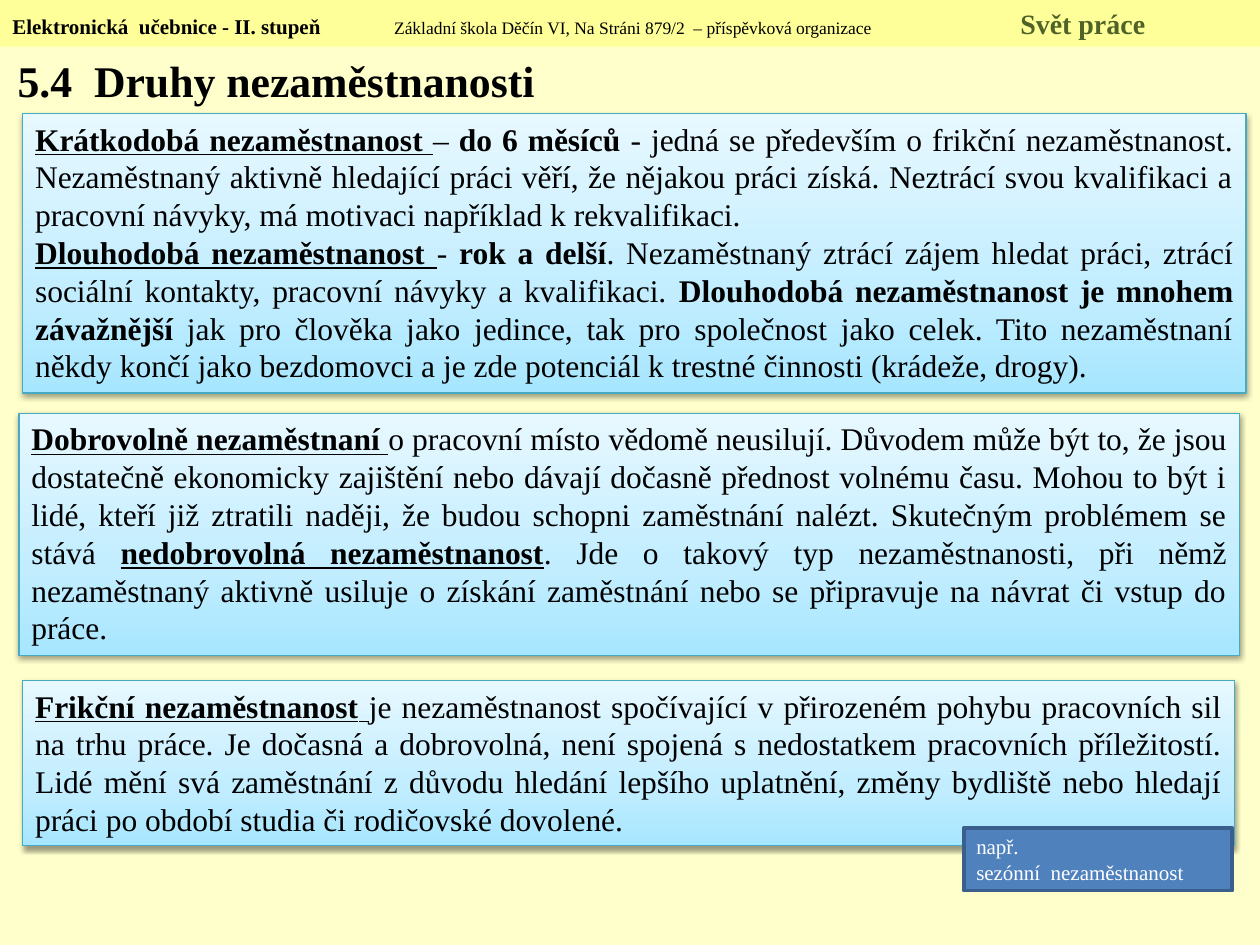
from lxml import etree
from pptx import Presentation
from pptx.dml.color import RGBColor
from pptx.enum import shapes, text
from pptx.oxml import parse_xml
from pptx.oxml.ns import nsdecls, qn
from pptx.util import Inches, Pt

FONT = "Times New Roman"
GRADIENT = [(0, "A7E6FF"), (35, "C1EDFF"), (100, "E7F8FF")]

VOLUNTARY = [
    [("Dobrovolně nezaměstnaní ", "bu"),
     ("o pracovní místo vědomě neusilují. Důvodem může být to, že jsou dostatečně "
      "ekonomicky zajištění nebo dávají dočasně přednost volnému času. Mohou to být i "
      "lidé, kteří již ztratili naději, že budou schopni zaměstnání nalézt. Skutečným "
      "problémem se stává ", ""),
     ("nedobrovolná nezaměstnanost", "bu"),
     (". Jde o takový typ nezaměstnanosti, při němž nezaměstnaný aktivně usiluje o "
      "získání zaměstnání nebo se připravuje na návrat či vstup do práce.", "")],
]
DURATION = [
    [("Krátkodobá nezaměstnanost ", "bu"), ("– ", ""), ("do 6 měsíců", "b"),
     (" - jedná se především o frikční nezaměstnanost. Nezaměstnaný aktivně hledající "
      "práci věří, že nějakou práci získá. Neztrácí svou kvalifikaci a pracovní návyky, "
      "má motivaci například k rekvalifikaci.", "")],
    [("Dlouhodobá nezaměstnanost ", "bu"), ("- ", ""), ("rok a delší", "b"),
     (". Nezaměstnaný ztrácí zájem hledat práci, ztrácí sociální kontakty, pracovní "
      "návyky a kvalifikaci. ", ""),
     ("Dlouhodobá nezaměstnanost je mnohem závažnější", "b"),
     (" jak pro člověka jako jedince, tak pro společnost jako celek. Tito nezaměstnaní "
      "někdy končí jako bezdomovci a je zde potenciál k trestné činnosti (krádeže, "
      "drogy).", "")],
]
FRICTIONAL = [
    [("Frikční nezaměstnanost", "bu"), (" ", "u"),
     ("je nezaměstnanost spočívající v přirozeném pohybu pracovních sil na trhu práce. "
      "Je dočasná a dobrovolná, není spojená s nedostatkem pracovních příležitostí. Lidé "
      "mění svá zaměstnání z důvodu hledání lepšího uplatnění, změny bydliště nebo "
      "hledají práci po období studia či rodičovské dovolené.", "")],
]


def rgb(value):
    """Return the colour for a hex string."""
    return RGBColor.from_string(value)


def add_run(p, words, size, style="", color="000000"):
    """Append a run; style may hold b for bold and u for underline."""
    r = p.add_run()
    r.text = words
    r.font.name = FONT
    r.font.size = Pt(size)
    r.font.bold = "b" in style
    r.font.underline = "u" in style
    r.font.color.rgb = rgb(color)


def add_box(s, left, top, width, height, fill=None, line=None, line_width=0.75):
    """Add a rectangle with top-anchored text."""
    sp = s.shapes.add_shape(shapes.MSO_SHAPE.RECTANGLE, Inches(left), Inches(top),
                            Inches(width), Inches(height))
    sp.shadow.inherit = False
    if fill:
        sp.fill.solid()
        sp.fill.fore_color.rgb = rgb(fill)
    if line:
        sp.line.color.rgb = rgb(line)
        sp.line.width = Pt(line_width)
    else:
        sp.line.fill.background()
    sp.text_frame.word_wrap = True
    sp.text_frame.vertical_anchor = text.MSO_ANCHOR.TOP
    return sp


def add_paragraphs(sp, paragraphs, size, align, color="000000"):
    """Fill a shape with paragraphs given as lists of (words, style)."""
    tf = sp.text_frame
    for i, runs in enumerate(paragraphs):
        p = tf.add_paragraph() if i else tf.paragraphs[0]
        p.alignment = align
        for words, style in runs:
            add_run(p, words, size, style, color)


def add_panel(s, left, top, width, height, paragraphs):
    """Add a shaded, shadowed panel of justified text."""
    sp = add_box(s, left, top, width, height, line="46AAC5")
    sp.fill.gradient()
    sp.fill.gradient_angle = 90
    props = sp._element.spPr
    stops = props.find(".//" + qn("a:gsLst"))
    for stop in list(stops):
        stops.remove(stop)
    for position, color in GRADIENT:
        stop = etree.SubElement(stops, qn("a:gs"), pos=str(position * 1000))
        etree.SubElement(stop, qn("a:srgbClr"), val=color)
    props.find(qn("a:effectLst")).append(parse_xml(
        f'<a:outerShdw {nsdecls("a")} blurRad="{Pt(3.1)}" dist="{Pt(1.6)}" '
        'dir="5400000" rotWithShape="0"><a:srgbClr val="000000">'
        '<a:alpha val="38000"/></a:srgbClr></a:outerShdw>'))
    add_paragraphs(sp, paragraphs, 18, text.PP_ALIGN.JUSTIFY)


def add_header(s):
    """Add the top band with its three tabbed labels."""
    p = add_box(s, 0, 0, 10, 0.37, "FFFF99").text_frame.paragraphs[0]
    p.alignment = text.PP_ALIGN.LEFT
    tabs = etree.SubElement(p._p.get_or_add_pPr(), qn("a:tabLst"))
    for position in (3.03, 8):
        etree.SubElement(tabs, qn("a:tab"), pos=str(Inches(position)), algn="l")
    add_run(p, "Elektronická  učebnice - II. stupeň\t", 12, "b")
    add_run(p, "Základní škola Děčín VI, Na Stráni 879/2  – příspěvková organizace\t", 10)
    add_run(p, "Svět práce", 16, "b", "4F6228")


def set_title(s, words):
    """Place and format the title."""
    sp = s.shapes.title
    sp.left, sp.top, sp.width, sp.height = map(Inches, (0.04, 0.37, 10, 0.53))
    tf = sp.text_frame
    tf.auto_size = text.MSO_AUTO_SIZE.NONE
    tf.vertical_anchor = text.MSO_ANCHOR.MIDDLE
    tf.paragraphs[0].alignment = text.PP_ALIGN.LEFT
    add_run(tf.paragraphs[0], words, 25, "b")


def main():
    """Build and save the slide."""
    prs = Presentation()
    prs.slide_width, prs.slide_height = Inches(10), Inches(7.5)
    s = prs.slides.add_slide(prs.slide_layouts[5])
    s.background.fill.solid()
    s.background.fill.fore_color.rgb = rgb("FFFFCC")
    add_header(s)
    set_title(s, "5.4  Druhy nezaměstnanosti")
    add_panel(s, 0.15, 3.28, 9.69, 1.92, VOLUNTARY)
    add_panel(s, 0.18, 0.9, 9.71, 2.22, DURATION)
    add_panel(s, 0.18, 5.4, 9.62, 1.31, FRICTIONAL)
    example = add_box(s, 7.65, 6.57, 2.13, 0.5, "4F81BD", "3A5F8C", 2)
    add_paragraphs(example, [[("např.", "")], [("sezónní  nezaměstnanost", "")]], 12,
                   text.PP_ALIGN.LEFT, "FFFFFF")
    prs.save("out.pptx")


if __name__ == "__main__":
    main()
